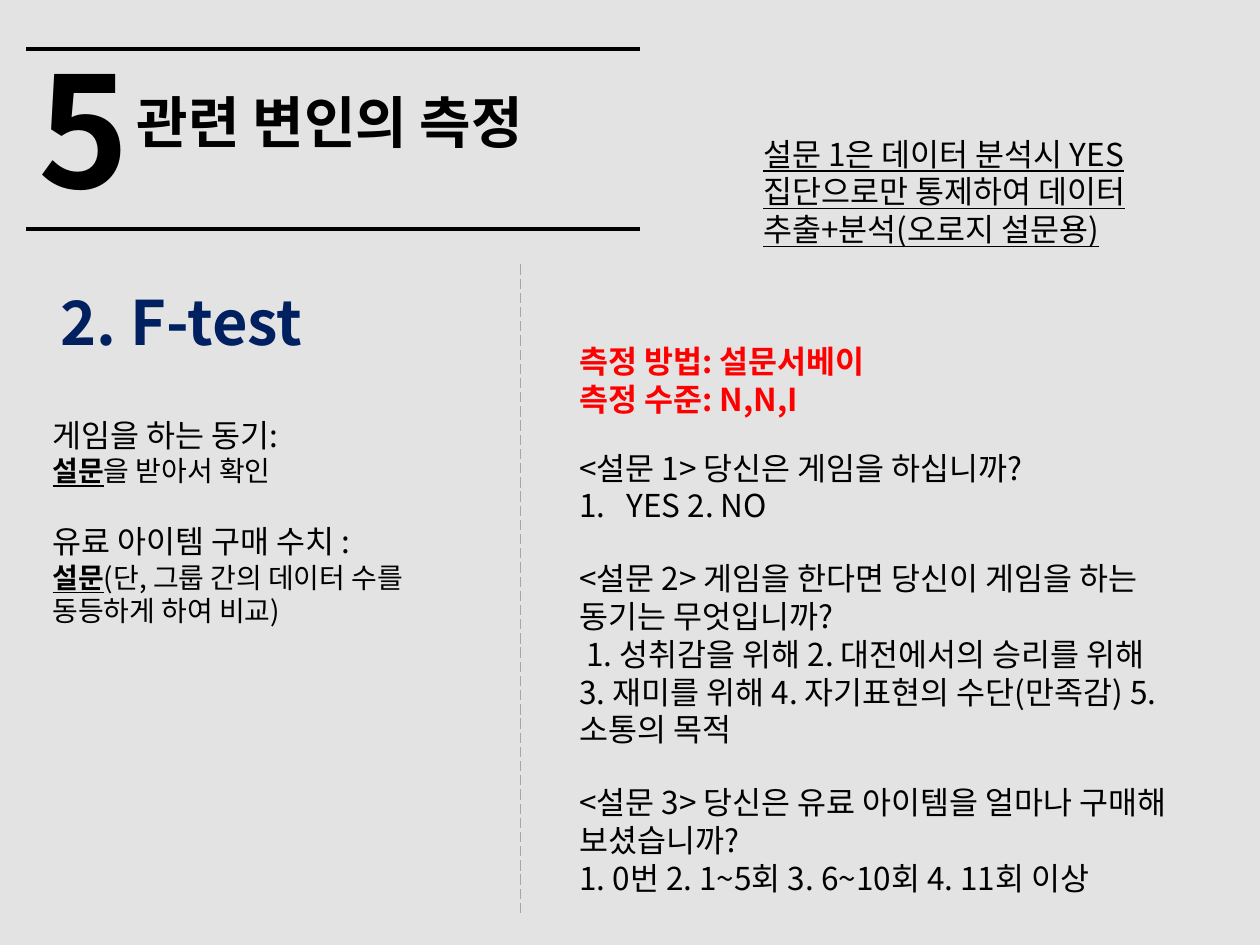
"""Builds the F-test slide on measuring the related variables."""
from dataclasses import dataclass

from lxml.etree import SubElement
from pptx import Presentation
from pptx.dml.color import RGBColor
from pptx.enum.dml import MSO_LINE
from pptx.enum.shapes import MSO_CONNECTOR
from pptx.enum.text import MSO_AUTO_SIZE
from pptx.oxml.ns import qn
from pptx.util import Cm, Pt

FONT = "Noto Sans CJK KR"
BLACK, NAVY, RED, GRAY, PAPER = "000000", "002060", "FF0000", "A6A6A6", "E3E3E3"
LINE_HEIGHT = 1.2


@dataclass
class Line:
    text: str
    size: int = 18
    keyword: str = ""
    gap: bool = False
    numbered: bool = False


@dataclass
class Block:
    place: tuple
    lines: list
    color: str = BLACK
    bold: bool = False
    underline: bool = False
    wrap: bool = True


BLOCKS = [
    Block((0.53, 0.58, 2.11, 4.01), [Line("5", 88)], bold=True),
    Block((2.51, 1.63, 10.85, 1.63), [Line("관련 변인의 측정", 32)], bold=True),
    Block((11.43, 8.92, 12.4, 10.26), [
        Line("<설문 1> 당신은 게임을 하십니까?"),
        Line("YES 2. NO", numbered=True),
        Line("<설문 2> 게임을 한다면 당신이 게임을 하는 동기는 무엇입니까?", gap=True),
        Line(" 1. 성취감을 위해 2. 대전에서의 승리를 위해 3. 재미를 위해 "
             "4. 자기표현의 수단(만족감) 5. 소통의 목적"),
        Line("<설문 3> 당신은 유료 아이템을 얼마나 구매해 보셨습니까?", gap=True),
        Line("1. 0번 2. 1~5회 3. 6~10회 4. 11회 이상"),
    ]),
    Block((0.81, 8.26, 8.79, 4.52), [
        Line("게임을 하는 동기:"),
        Line("을 받아서 확인", 16, keyword="설문"),
        Line("유료 아이템 구매 수치 :", gap=True),
        Line("(단, 그룹 간의 데이터 수를 동등하게 하여 비교)", 16, keyword="설문"),
    ]),
    Block((0.97, 5.61, 5.38, 1.75), [Line("2. F-test", 35)], NAVY, bold=True, wrap=False),
    Block((11.43, 6.78, 6.91, 1.8), [
        Line("측정 방법: 설문서베이"),
        Line("측정 수준: N,N,I"),
    ], RED, bold=True, wrap=False),
    Block((15.14, 2.59, 7.8, 3.33), [
        Line("설문 1은 데이터 분석시 YES집단으로만 통제하여 데이터 추출+분석(오로지 설문용)"),
    ], underline=True),
]

RULES = [
    ((0.53, 0.99, 12.9, 0.99), BLACK, 2, None),
    ((0.53, 4.62, 12.9, 4.62), BLACK, 2, None),
    ((10.49, 5.33, 10.49, 18.42), GRAY, 0.75, MSO_LINE.LONG_DASH),
]


def rgb(value):
    return RGBColor.from_string(value)


def number(para):
    properties = para._p.get_or_add_pPr()
    properties.set("marL", str(Cm(0.95)))
    properties.set("indent", str(-Cm(0.95)))
    SubElement(properties, qn("a:buFont")).set("typeface", FONT)
    SubElement(properties, qn("a:buAutoNum")).set("type", "arabicPeriod")


def style(span, size, color, bold, underline):
    font = span.font
    font.name, font.size = FONT, Pt(size)
    font.bold, font.underline = bold, underline
    font.color.rgb = rgb(color)
    SubElement(span._r.get_or_add_rPr(), qn("a:ea")).set("typeface", FONT)


def fill_paragraph(para, line, block):
    para.text = line.keyword or line.text
    if line.keyword:
        para.add_run().text = line.text
    para.line_spacing = Pt(line.size * LINE_HEIGHT)
    if line.gap:
        para.space_before = Pt(20)
    if line.numbered:
        number(para)
    for index, span in enumerate(para.runs):
        marked = bool(line.keyword) and index == 0
        style(span, line.size, block.color, block.bold or marked, block.underline or marked)


def add_block(slide, block):
    box = slide.shapes.add_textbox(*map(Cm, block.place))
    frame = box.text_frame
    frame.word_wrap = block.wrap
    frame.auto_size = MSO_AUTO_SIZE.SHAPE_TO_FIT_TEXT
    frame.text = "\n".join(line.text for line in block.lines)
    for para, line in zip(frame.paragraphs, block.lines):
        fill_paragraph(para, line, block)


def add_rule(slide, ends, color, width, dash):
    rule = slide.shapes.add_connector(MSO_CONNECTOR.STRAIGHT, *map(Cm, ends))
    rule.line.color.rgb = rgb(color)
    rule.line.width = Pt(width)
    if dash:
        rule.line.dash_style = dash
    SubElement(rule._element.spPr, qn("a:effectLst"))


def main():
    deck = Presentation()
    deck.slide_width, deck.slide_height = Cm(25.4), Cm(19.05)
    slide = deck.slides.add_slide(deck.slide_layouts[6])
    slide.background.fill.solid()
    slide.background.fill.fore_color.rgb = rgb(PAPER)
    for rule in RULES:
        add_rule(slide, *rule)
    for block in BLOCKS:
        add_block(slide, block)
    deck.save("out.pptx")


if __name__ == "__main__":
    main()
